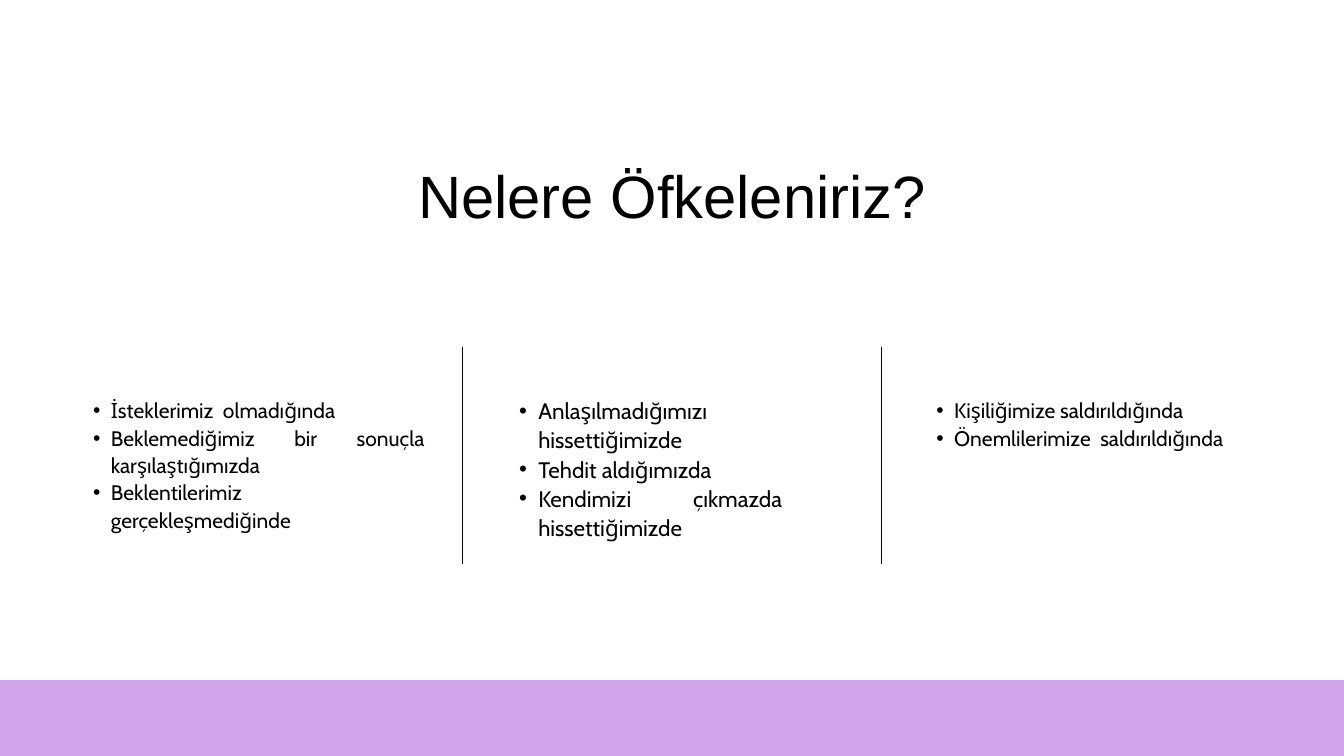
"""Build a slide that lists in three columns what makes us angry."""
from dataclasses import dataclass

from lxml.etree import SubElement
from pptx import Presentation
from pptx.dml.color import RGBColor as Rgb
from pptx.enum.shapes import MSO_CONNECTOR as Connector, MSO_SHAPE as Shape
from pptx.enum.text import MSO_AUTO_SIZE as AutoSize, PP_ALIGN as Align
from pptx.oxml.ns import qn
from pptx.util import Emu, Pt

TITLE = "Nelere Öfkeleniriz?"
TITLE_AREA = (451, 237, 1098, 115)
COLUMNS = [
    {"area": (112, 589, 520, 244), "size": 22.5, "indent": 53, "items": [
        "İsteklerimiz  olmadığında",
        "Beklemediğimiz bir sonuçla karşılaştığımızda",
        "Beklentilerimiz  gerçekleşmediğinde"]},
    {"area": (744, 588, 512, 257), "size": 24, "indent": 57, "items": [
        "Anlaşılmadığımızı  hissettiğimizde",
        "Tehdit aldığımızda",
        "Kendimizi çıkmazda  hissettiğimizde"]},
    {"area": (1367, 589, 520, 122), "size": 22.5, "indent": 53, "items": [
        "Kişiliğimize saldırıldığında",
        "Önemlilerimize  saldırıldığında"]},
]
PAGE_WIDTH, PAGE_HEIGHT = 2000, 1125
BAND_HEIGHT = 113
DIVIDER_XS = (688, 1312)
DIVIDER_TOP, DIVIDER_BOTTOM = 517, 839


@dataclass(frozen=True)
class Theme:
    ink: Rgb = Rgb(0, 0, 0)
    band: Rgb = Rgb(0xD1, 0xA3, 0xE8)
    title_font: str = "Arial"
    body_font: str = "Cabin"
    title_size: float = 64
    title_leading: float = 1.2
    body_leading: float = 1.3
    rule: float = 0.75


THEME = Theme()


def px(value):
    return Emu(round(value * 9144))


def add_text_box(page, area):
    box = page.shapes.add_textbox(*map(px, area))
    frame = box.text_frame
    frame.margin_left = frame.margin_top = frame.margin_right = frame.margin_bottom = 0
    frame.word_wrap = True
    frame.auto_size = AutoSize.SHAPE_TO_FIT_TEXT
    return frame


def write(para, text, font, size, leading, align):
    para.alignment = align
    para.line_spacing = Pt(size * leading)
    span = para.add_run()
    span.text = text
    span.font.name = font
    span.font.size = Pt(size)
    span.font.color.rgb = THEME.ink


def add_bullet(para, indent):
    para.level = 1
    props = para._p.get_or_add_pPr()
    props.set("marL", str(px(indent)))
    props.set("indent", str(px(-indent / 2)))
    SubElement(props, qn("a:buFont"), typeface=THEME.title_font)
    SubElement(props, qn("a:buChar"), char="•")


def add_title(page):
    para = add_text_box(page, TITLE_AREA).paragraphs[0]
    write(para, TITLE, THEME.title_font, THEME.title_size, THEME.title_leading, Align.CENTER)


def add_band(page):
    band = page.shapes.add_shape(
        Shape.RECTANGLE, 0, px(PAGE_HEIGHT - BAND_HEIGHT), px(PAGE_WIDTH), px(BAND_HEIGHT))
    band.shadow.inherit = False
    band.fill.solid()
    band.fill.fore_color.rgb = THEME.band
    band.line.fill.background()


def add_column(page, column):
    frame = add_text_box(page, column["area"])
    for index, item in enumerate(column["items"]):
        para = frame.add_paragraph() if index else frame.paragraphs[0]
        add_bullet(para, column["indent"])
        write(para, item, THEME.body_font, column["size"], THEME.body_leading, Align.JUSTIFY)


def add_divider(page, x):
    line = page.shapes.add_connector(
        Connector.STRAIGHT, px(x), px(DIVIDER_TOP), px(x), px(DIVIDER_BOTTOM))
    line.line.color.rgb = THEME.ink
    line.line.width = Pt(THEME.rule)
    SubElement(line._element.spPr, qn("a:effectLst"))


def main():
    deck = Presentation()
    deck.slide_width, deck.slide_height = px(PAGE_WIDTH), px(PAGE_HEIGHT)
    page = deck.slides.add_slide(deck.slide_layouts[6])
    add_title(page)
    add_band(page)
    for column in COLUMNS:
        add_column(page, column)
    for x in DIVIDER_XS:
        add_divider(page, x)
    deck.save("out.pptx")


if __name__ == "__main__":
    main()
